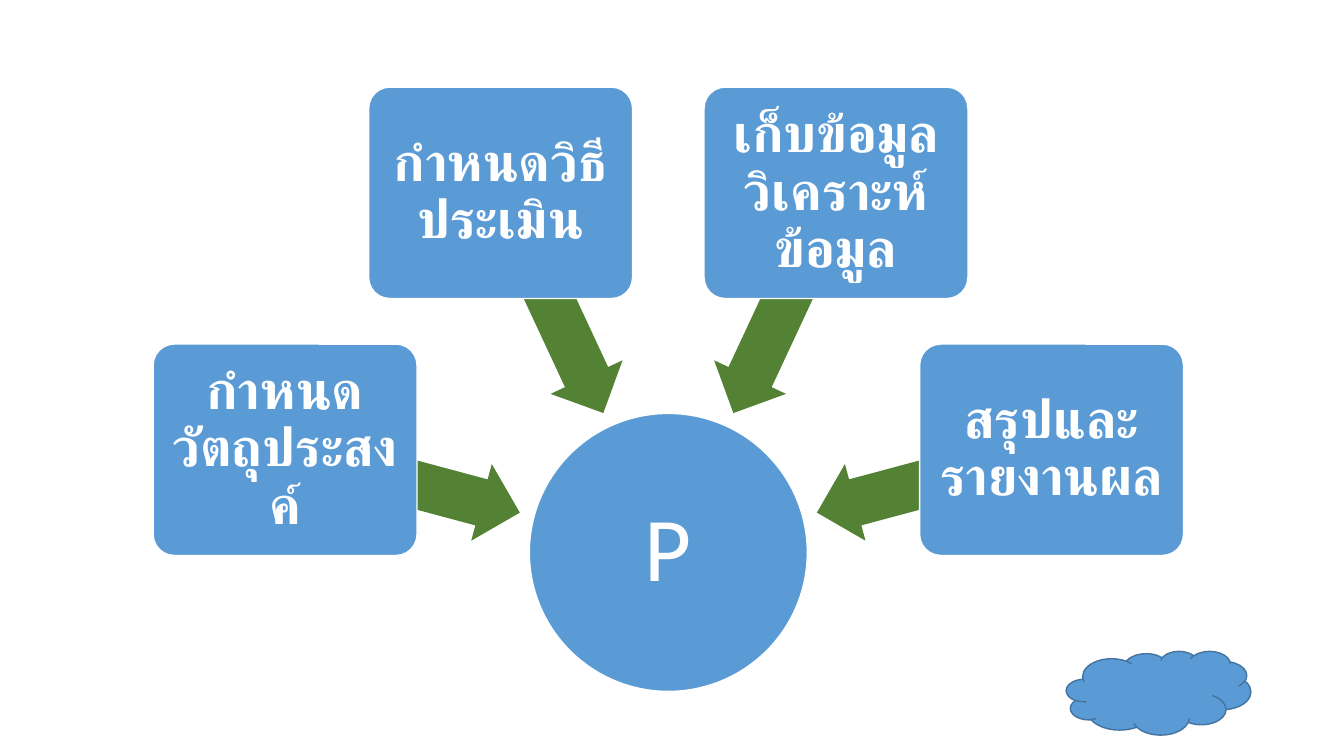
import math

from pptx import Presentation
from pptx import util as u
from pptx.dml.color import RGBColor
from pptx.enum import shapes, text

COLORS = {"blue": "5B9BD5", "green": "548235", "outline": "43739E", "white": "FFFFFF"}
CENTER = (477.4, 394.6)
HUB_SIZE = 198.6
BOX_SIZE, BOX_RADIUS = (188.5, 151), 283.4
ARROW_SIZE, ARROW_RADIUS = (173.5, 56.7), 196.6
STEPS = [
    "กำหนดวัตถุประสงค์",
    "กำหนดวิธีประเมิน",
    "เก็บข้อมูล วิเคราะห์ข้อมูล",
    "สรุปและรายงานผล",
]
FIRST_ANGLE, ANGLE_STEP = 195, 50


def rgb(name):
    return RGBColor.from_string(COLORS[name])


def on_circle(radius, angle):
    """Return the point at the given clockwise angle around the hub."""
    a = math.radians(angle)
    return CENTER[0] + radius * math.cos(a), CENTER[1] + radius * math.sin(a)


def write(sp, content, size, bold=False, inset=0.0, color="white", font="Calibri"):
    tf = sp.text_frame
    tf.word_wrap = True
    tf.vertical_anchor = text.MSO_ANCHOR.MIDDLE
    tf.margin_left = tf.margin_right = tf.margin_top = tf.margin_bottom = u.Pt(inset)
    p = tf.paragraphs[0]
    p.alignment = text.PP_ALIGN.CENTER
    p.line_spacing = 0.9
    r = p.add_run()
    r.text = content
    r.font.size = u.Pt(size)
    r.font.bold = bold
    r.font.name = font
    r.font.color.rgb = rgb(color)


class Diagram:
    def __init__(self, slide):
        self.s = slide

    def shape(self, kind, center, size, fill="blue", line=None):
        w, h = size
        left, top = center[0] - w / 2, center[1] - h / 2
        sp = self.s.shapes.add_shape(kind, u.Pt(left), u.Pt(top), u.Pt(w), u.Pt(h))
        sp.shadow.inherit = False
        sp.fill.solid()
        sp.fill.fore_color.rgb = rgb(fill)
        if line:
            sp.line.color.rgb = rgb(line)
            sp.line.width = u.Pt(1)
        else:
            sp.line.fill.background()
        return sp

    def hub(self, label):
        sp = self.shape(shapes.MSO_SHAPE.OVAL, CENTER, (HUB_SIZE, HUB_SIZE), line="white")
        write(sp, label, 65, inset=3.6)

    def arrow(self, angle):
        sp = self.shape(shapes.MSO_SHAPE.LEFT_ARROW, on_circle(ARROW_RADIUS, angle),
                        ARROW_SIZE, fill="green")
        sp.adjustments[0] = 0.6
        sp.adjustments[1] = 0.5
        sp.rotation = angle

    def box(self, label, angle):
        sp = self.shape(shapes.MSO_SHAPE.ROUNDED_RECTANGLE, on_circle(BOX_RADIUS, angle),
                        BOX_SIZE, line="white")
        sp.adjustments[0] = 0.1
        write(sp, label, 38, bold=True, inset=5.7)

    def cloud(self, center, size):
        self.shape(shapes.MSO_SHAPE.CLOUD, center, size, line="outline")


def main():
    prs = Presentation()
    prs.slide_width, prs.slide_height = u.Pt(960), u.Pt(540)
    diagram = Diagram(prs.slides.add_slide(prs.slide_layouts[6]))
    diagram.hub("P")
    for i, step in enumerate(STEPS):
        angle = FIRST_ANGLE + i * ANGLE_STEP
        diagram.arrow(angle)
        diagram.box(step, angle)
    diagram.cloud((827.6, 495), (131.8, 59.8))
    prs.save("out.pptx")


if __name__ == "__main__":
    main()
